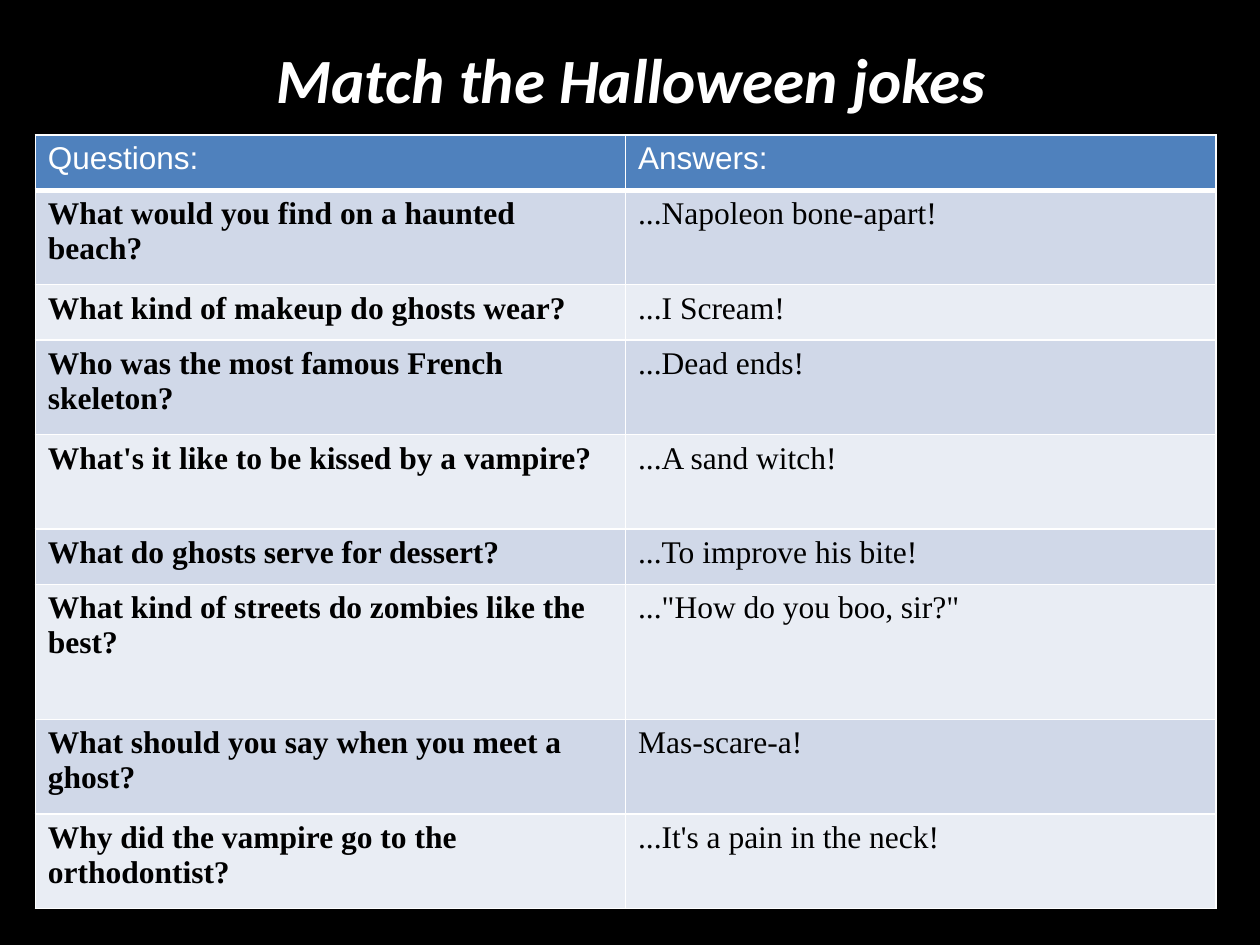
from lxml import etree
from pptx import Presentation
from pptx.dml.color import RGBColor
from pptx.enum.text import MSO_ANCHOR, MSO_AUTO_SIZE, PP_ALIGN
from pptx.oxml.ns import qn
from pptx.util import Inches, Pt

BLACK = RGBColor(0x00, 0x00, 0x00)
WHITE = RGBColor(0xFF, 0xFF, 0xFF)
HEADER_BLUE = RGBColor(0x4F, 0x81, 0xBD)
BANDS = (RGBColor(0xD0, 0xD8, 0xE8), RGBColor(0xE9, 0xED, 0xF4))
LEFT, CENTER = PP_ALIGN.LEFT, PP_ALIGN.CENTER
MIDDLE = MSO_ANCHOR.MIDDLE
NO_AUTOFIT = MSO_AUTO_SIZE.NONE

HEADERS = ("Questions:", "Answers:")
HEADER_HEIGHT = 0.44
JOKES = [
    ("What would you find on a haunted beach?", "...Napoleon bone-apart!", 0.75),
    ("What kind of makeup do ghosts wear?", "...I Scream!", 0.44),
    ("Who was the most famous French skeleton?", "...Dead ends!", 0.75),
    ("What's it like to be kissed by a vampire?", "...A sand witch!", 0.75),
    ("What do ghosts serve for dessert?", "...To improve his bite!", 0.44),
    ("What kind of streets do zombies like the best?", '..."How do you boo, sir?"', 1.07),
    ("What should you say when you meet a ghost?", "Mas-scare-a!", 0.75),
    ("Why did the vampire go to the orthodontist?", "...It's a pain in the neck!", 0.75),
]


def write_text(tf, text, font, size=18, color=BLACK, bold=False, italic=False, align=LEFT):
    p = tf.paragraphs[0]
    p.alignment = align
    r = p.add_run()
    r.text = text
    r.font.name = font
    r.font.size = Pt(size)
    r.font.bold = bold
    r.font.italic = italic
    r.font.color.rgb = color


def set_borders(cell, bottom=1):
    tcPr = cell._tc.get_or_add_tcPr()
    for side, width in (("L", 1), ("R", 1), ("T", 1), ("B", bottom)):
        ln = etree.SubElement(tcPr, qn(f"a:ln{side}"), w=str(Pt(width)))
        fill = etree.SubElement(ln, qn("a:solidFill"))
        etree.SubElement(fill, qn("a:srgbClr"), val=str(WHITE))


def format_cell(cell, text, fill, bottom=1, **style):
    set_borders(cell, bottom)
    cell.fill.solid()
    cell.fill.fore_color.rgb = fill
    write_text(cell.text_frame, text, **style)


def add_title(s, text):
    title = s.shapes.title
    title.left, title.top = Inches(0.51), Inches(0)
    title.width, title.height = Inches(9), Inches(1.25)
    tf = title.text_frame
    tf.auto_size = NO_AUTOFIT
    tf.vertical_anchor = MIDDLE
    write_text(tf, text, font="Calibri", size=36, color=WHITE, bold=True, italic=True, align=CENTER)


def add_joke_table(s):
    heights = [HEADER_HEIGHT] + [height for _, _, height in JOKES]
    table = s.shapes.add_table(len(heights), len(HEADERS), Inches(0.28), Inches(1.07),
                               Inches(9.37), Inches(sum(heights))).table
    for row, height in zip(table.rows, heights):
        row.height = Inches(height)
    for col, text in enumerate(HEADERS):
        format_cell(table.cell(0, col), text, HEADER_BLUE, bottom=3, font="Arial", color=WHITE)
    for i, (question, answer, _) in enumerate(JOKES):
        for col, text in enumerate((question, answer)):
            format_cell(table.cell(i + 1, col), text, BANDS[i % 2],
                        font="Times New Roman", bold=col == 0)


def main():
    prs = Presentation()
    prs.slide_width, prs.slide_height = Inches(10), Inches(7.5)
    s = prs.slides.add_slide(prs.slide_layouts[5])
    s.background.fill.solid()
    s.background.fill.fore_color.rgb = BLACK
    add_title(s, "Match the Halloween jokes")
    add_joke_table(s)
    prs.save("out.pptx")


if __name__ == "__main__":
    main()
